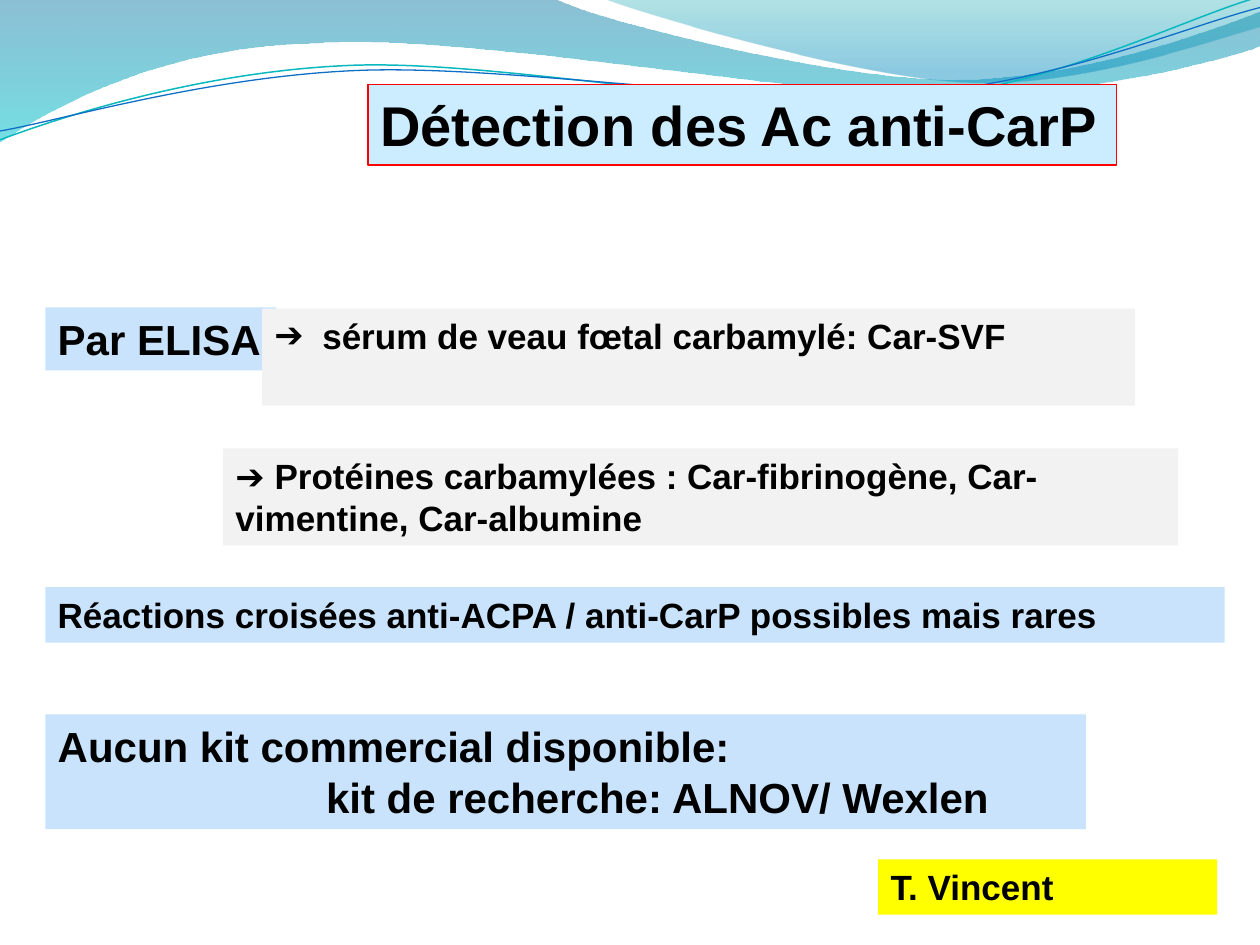
from pptx import Presentation
from pptx.dml.color import RGBColor
from pptx.enum.text import MSO_ANCHOR, MSO_AUTO_SIZE, PP_ALIGN
from pptx.oxml.ns import qn
from pptx.util import Inches, Pt
from lxml import etree

TOP = MSO_ANCHOR.TOP
LEFT = PP_ALIGN.LEFT
GROW, FIXED = MSO_AUTO_SIZE.SHAPE_TO_FIT_TEXT, MSO_AUTO_SIZE.NONE
PALE_BLUE, PALE_GREY = "C8E3FB", "F2F2F2"


def rgb(value):
    return RGBColor.from_string(value)


def add_text(p, text, size=20, color="000000", bold=True, font="Arial", indent=0, bullet=None):
    p.alignment = LEFT
    pPr = p._p.get_or_add_pPr()
    if indent:
        pPr.set("marL", str(Inches(indent)))
    if bullet:
        pPr.set("indent", str(-Inches(indent)))
        etree.SubElement(pPr, qn("a:buFont")).set("typeface", font)
        etree.SubElement(pPr, qn("a:buChar")).set("char", bullet)
    r = p.add_run()
    r.text = text
    r.font.name, r.font.size, r.font.bold = font, Pt(size), bold
    r.font.color.rgb = rgb(color)


class Deck:
    def __init__(self, width, height):
        self.prs = Presentation()
        self.prs.slide_width, self.prs.slide_height = Inches(width), Inches(height)
        self.s = self.prs.slides.add_slide(self.prs.slide_layouts[6])

    def outline(self, start, segments, close):
        points = [(Inches(seg[i]), Inches(seg[i + 1]))
                  for seg in segments for i in range(0, len(seg), 2)]
        builder = self.s.shapes.build_freeform(Inches(start[0]), Inches(start[1]), scale=1.0)
        builder.add_line_segments(points, close=close)
        sp = builder.convert_to_shape()
        sp.shadow.inherit = False
        lines = iter(list(sp._element.iter(qn("a:lnTo"))))
        for seg in segments:
            first = next(lines)
            if len(seg) == 6:
                first.tag = qn("a:cubicBezTo")
                for extra in (next(lines), next(lines)):
                    first.append(extra[0])
                    extra.getparent().remove(extra)
        return sp

    def wave(self, stops, start, *segments):
        sp = self.outline(start, segments, True)
        sp.line.fill.background()
        sp.fill.gradient()
        sp.fill.gradient_angle = 270
        for stop, (position, color, _) in zip(sp.fill.gradient_stops, stops):
            stop.position = position
            stop.color.rgb = rgb(color)
        for clr, (_, _, opacity) in zip(sp._element.iter(qn("a:srgbClr")), stops):
            etree.SubElement(clr, qn("a:alpha")).set("val", str(opacity * 1000))

    def strand(self, color, width, start, *segments):
        sp = self.outline(start, segments, False)
        sp.fill.background()
        sp.line.color.rgb = rgb(color)
        sp.line.width = Pt(width)

    def box(self, x, y, w, h, fill, *paragraphs, line=None, wrap=True, fit=GROW):
        sp = self.s.shapes.add_textbox(Inches(x), Inches(y), Inches(w), Inches(h))
        sp.fill.solid()
        sp.fill.fore_color.rgb = rgb(fill)
        if line:
            sp.line.color.rgb = rgb(line)
            sp.line.width = Pt(0.75)
        tf = sp.text_frame
        tf.word_wrap, tf.vertical_anchor, tf.auto_size = wrap, TOP, fit
        for i, (text, style) in enumerate(paragraphs):
            p = tf.add_paragraph() if i else tf.paragraphs[0]
            add_text(p, text, **style)


def main():
    deck = Deck(10, 7.5)
    deck.wave([(0, "0074A1", 45), (1, "00C6CF", 55)],
              (0, 0), (4.4, -0.01), (4.76, 0.17, 6.64, 0.63, 7.58, 0.63),
              (8.53, 0.63, 9.58, 0.26, 10, 0.09), (10.01, 0.36),
              (9.83, 0.44, 8.7, 0.76, 7.46, 0.75), (6.22, 0.75, 3.82, 0.28, 2.57, 0.34),
              (1.29, 0.36, 0.46, 0.83, -0.01, 1.13))
    deck.wave([(0, "00A1A9", 30), (0.8, "008BBF", 45)],
              (4.79, -0.01), (5.09, 0.11, 6.82, 0.62, 7.69, 0.65),
              (8.56, 0.69, 9.61, 0.32, 10, 0.21), (10, 0))
    deck.strand("0AB8BF", 0.85,
                (0, 1.11), (0.48, 0.93, 1.58, 0.57, 2.77, 0.52),
                (3.95, 0.47, 5.93, 0.89, 7.13, 0.8), (8.33, 0.71, 9.38, 0.15, 9.98, -0.02))
    deck.strand("0F6FC6", 0.75,
                (0, 1.04), (0.47, 0.96, 1.64, 0.61, 2.83, 0.56),
                (4.03, 0.51, 5.97, 0.84, 7.17, 0.75), (8.36, 0.67, 9.41, 0.21, 10, 0.06))

    deck.box(2.92, 0.67, 5.94, 0.64, "CCECFF",
             ("Détection des Ac anti-CarP", {"size": 32}), line="FF0000", wrap=False)
    deck.box(0.36, 2.44, 1.83, 0.5, PALE_BLUE, ("Par ELISA", {"size": 24}), wrap=False)
    deck.box(2.08, 2.45, 6.93, 0.77, PALE_GREY,
             ("sérum de veau fœtal carbamylé: Car-SVF", {"indent": 0.38, "bullet": "➔"}),
             fit=FIXED)
    deck.box(1.77, 3.56, 7.58, 0.77, PALE_GREY,
             ("➔ Protéines carbamylées : Car-fibrinogène, Car-vimentine, Car-albumine", {}))
    deck.box(0.36, 4.66, 9.36, 0.44, PALE_BLUE,
             ("Réactions croisées anti-ACPA / anti-CarP possibles mais rares", {}))
    deck.box(0.36, 5.67, 8.26, 0.91, PALE_BLUE,
             ("Aucun kit commercial disponible:", {"size": 24}),
             ("kit de recherche: ALNOV/ Wexlen", {"size": 24, "indent": 2.13}))
    deck.box(6.97, 6.82, 2.69, 0.44, "FFFF00", ("T. Vincent", {}))
    deck.prs.save("out.pptx")


if __name__ == "__main__":
    main()
